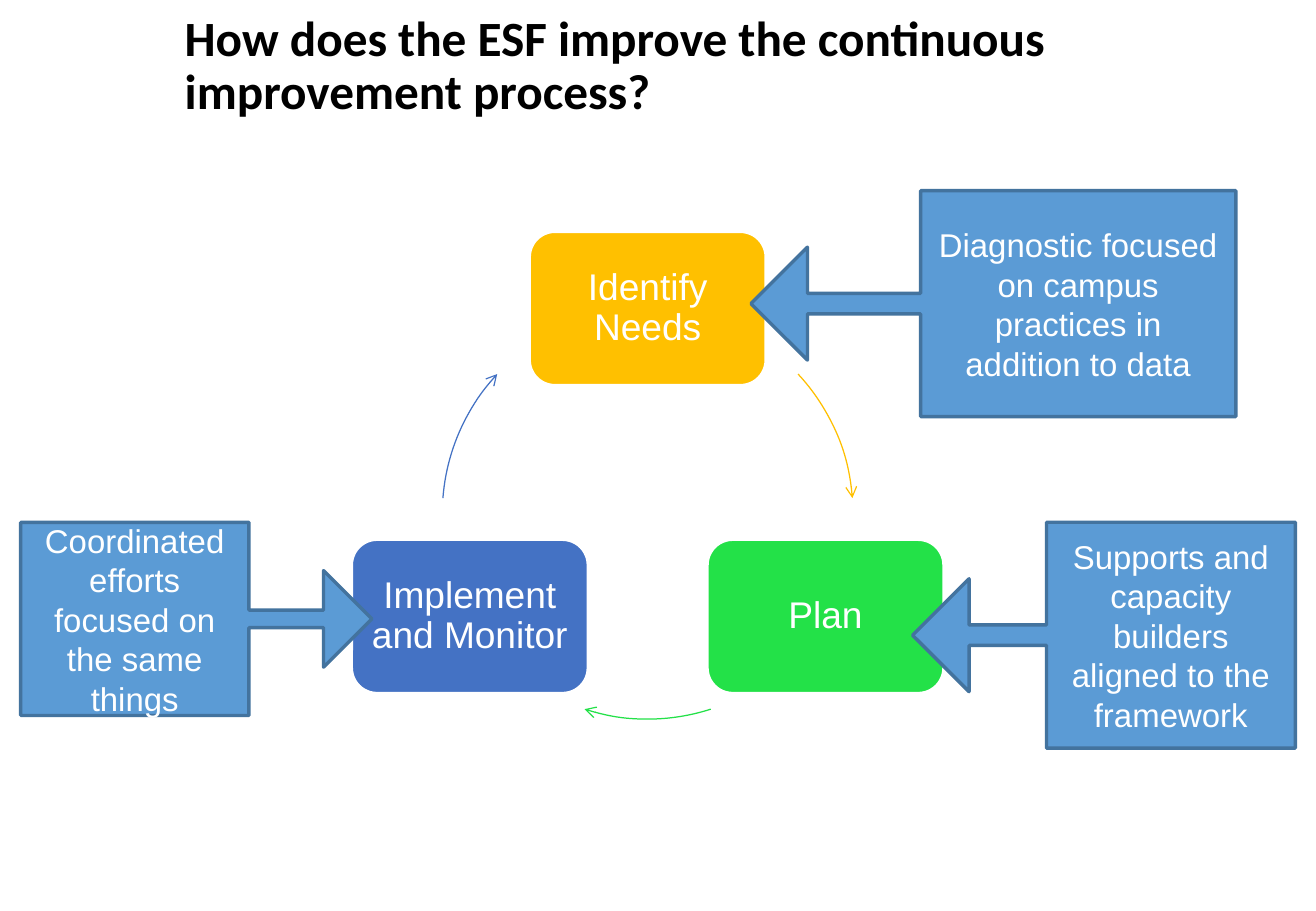
from math import cos, radians, sin

from lxml import etree
from pptx import Presentation
from pptx.dml.color import RGBColor
from pptx.enum.shapes import MSO_SHAPE
from pptx.enum.text import MSO_ANCHOR, MSO_AUTO_SIZE, PP_ALIGN
from pptx.oxml.ns import qn
from pptx.util import Inches, Pt

ROUND, ARC = MSO_SHAPE.ROUNDED_RECTANGLE, MSO_SHAPE.ARC
LEFT_CALL = MSO_SHAPE.LEFT_ARROW_CALLOUT
RIGHT_CALL = MSO_SHAPE.RIGHT_ARROW_CALLOUT
MIDDLE, BOTTOM = MSO_ANCHOR.MIDDLE, MSO_ANCHOR.BOTTOM
LEFT, CENTER = PP_ALIGN.LEFT, PP_ALIGN.CENTER
NO_FIT = MSO_AUTO_SIZE.NONE

WHITE, BLACK = "FFFFFF", "000000"
SKY, STEEL = "5B9BD5", "43739E"

# Node text, colour, angle on the ring, then start and end of the arc after it
STEPS = [
    ("Identify Needs", "FFC000", -90, 317.1, 355.6),
    ("Plan", "23E148", 30, 72.1, 107.9),
    ("Implement and Monitor", "4472C4", 150, 184.4, 222.9),
]
NOTES = [
    (LEFT_CALL, (6.18, 1.57, 3.99, 1.86),
     "Diagnostic focused on campus practices in addition to data"),
    (LEFT_CALL, (7.51, 4.3, 3.15, 1.86),
     "Supports and capacity builders aligned to the framework"),
    (RIGHT_CALL, (0.17, 4.3, 2.89, 1.59),
     "Coordinated efforts focused on the same things"),
]


def color(code):
    return RGBColor.from_string(code)


def put_text(shape, text, size, font, code, align, anchor, space=1.0):
    frame = shape.text_frame
    frame.word_wrap = True
    frame.auto_size = NO_FIT
    frame.vertical_anchor = anchor
    frame.text = text
    para = frame.paragraphs[0]
    para.alignment = align
    para.line_spacing = space
    para.font.size = Pt(size)
    para.font.name = font
    para.font.color.rgb = color(code)
    return frame


def add_form(slide, kind, box, fill, line, width):
    shape = slide.shapes.add_shape(kind, *map(Inches, box))
    shape.shadow.inherit = False
    if fill:
        shape.fill.solid()
        shape.fill.fore_color.rgb = color(fill)
    else:
        shape.fill.background()
    shape.line.color.rgb = color(line)
    shape.line.width = Pt(width)
    return shape


def add_title(slide, box, text):
    title = slide.shapes.title
    title.left, title.top, title.width, title.height = map(Inches, box)
    frame = put_text(title, text, 29.2, "Calibri", BLACK, LEFT, BOTTOM, 0.9)
    frame.margin_left = frame.margin_right = 0
    frame.margin_top = frame.margin_bottom = Inches(0.05)
    frame.paragraphs[0].font.bold = True


def add_cycle(slide, box, node_w=1.95, node_h=1.27):
    """Nodes and arrows on the circle that fills the box."""
    left, top, size, _ = box
    radius = size / 2
    for text, fill, angle, start, end in STEPS:
        # Node, centred on the ring
        x = left + radius + radius * cos(radians(angle)) - node_w / 2
        y = top + radius + radius * sin(radians(angle)) - node_h / 2
        node = add_form(slide, ROUND, (x, y, node_w, node_h), fill, WHITE, 2)
        frame = put_text(node, text, 22, "Arial", WHITE, CENTER, MIDDLE, 0.9)
        frame.margin_left = frame.margin_right = Inches(0.09)
        frame.margin_top = frame.margin_bottom = Inches(0.09)

        # Curved arrow to the next node; angles are stored as 60000ths
        arc = add_form(slide, ARC, box, None, fill, 0.75)
        arc.adjustments[0] = start * 0.6
        arc.adjustments[1] = end * 0.6
        tip = etree.SubElement(arc.line._get_or_add_ln(), qn("a:tailEnd"))
        tip.set("type", "arrow")


def add_note(slide, kind, box, text):
    note = add_form(slide, kind, box, SKY, STEEL, 2)
    for i, value in enumerate((0.091, 0.25, 0.25, 0.65)):
        note.adjustments[i] = value
    put_text(note, text, 19.5, "Arial", WHITE, CENTER, MIDDLE)


def main():
    deck = Presentation()
    deck.slide_width, deck.slide_height = Inches(10.83), Inches(7.5)
    slide = deck.slides.add_slide(deck.slide_layouts[5])
    add_title(slide, (1.52, 0.3, 9.31, 0.74),
              "How does the ESF improve the continuous improvement process?")
    add_cycle(slide, (3.64, 2.54, 3.38, 3.38))
    for kind, box, text in NOTES:
        add_note(slide, kind, box, text)
    deck.save("out.pptx")


if __name__ == "__main__":
    main()
